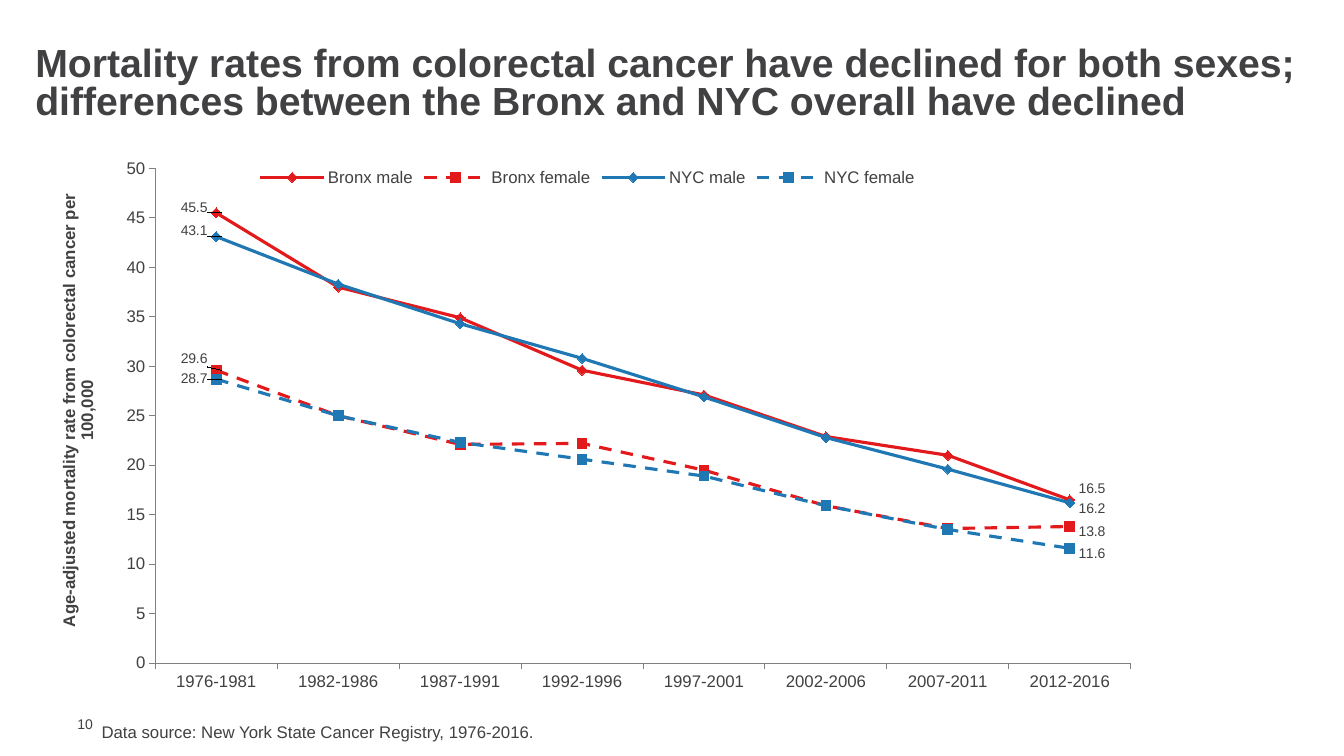
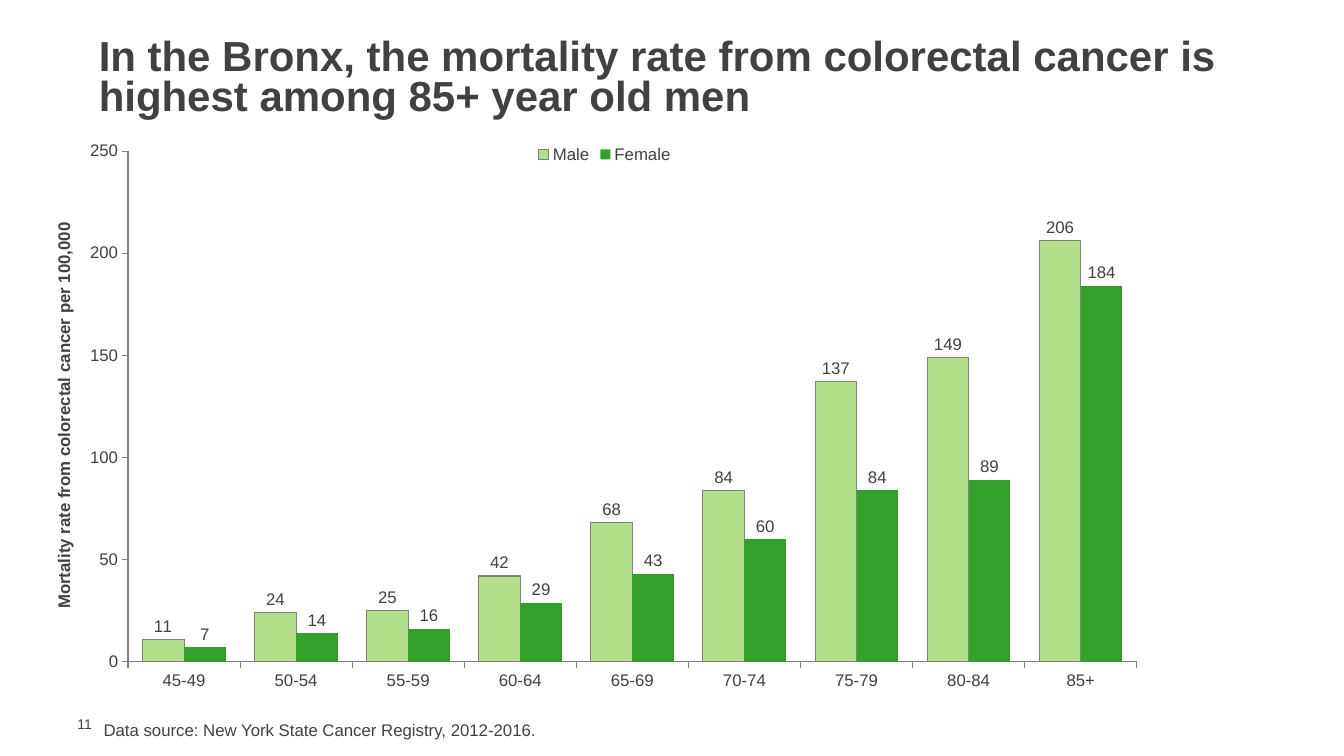
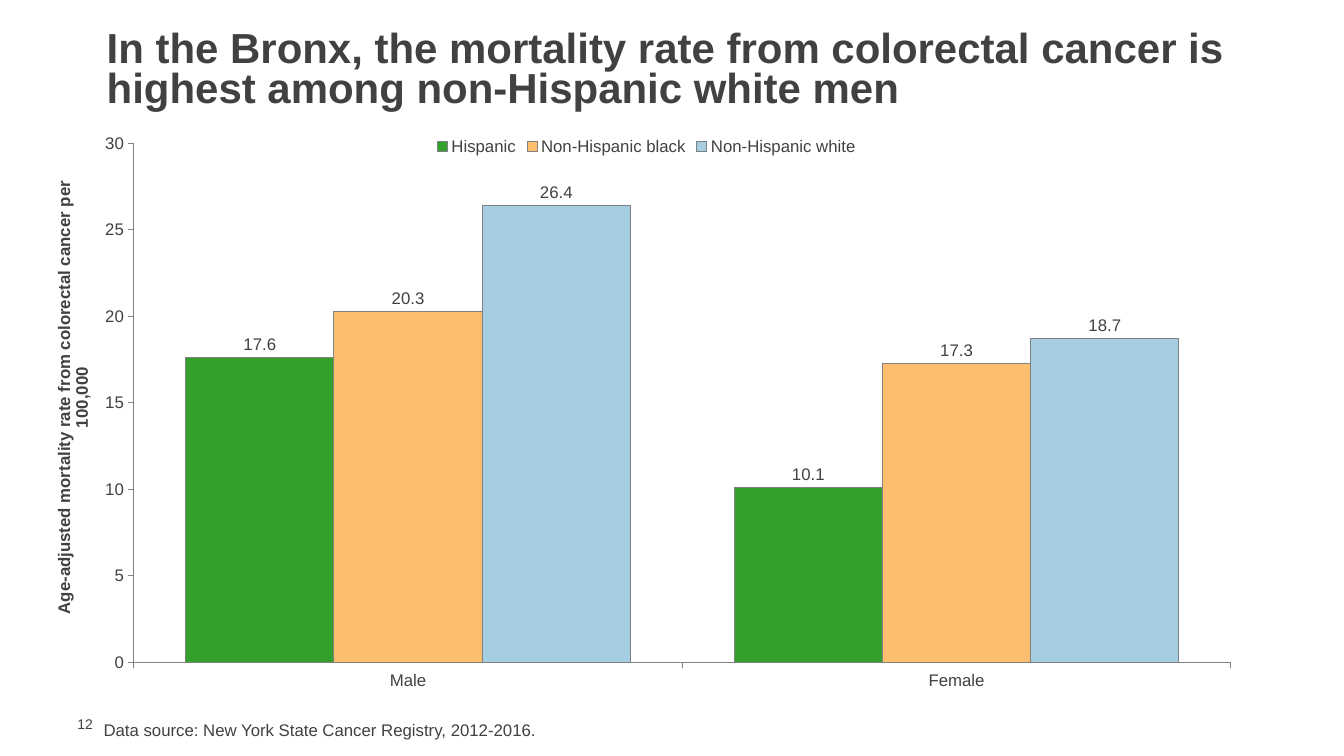
from lxml.etree import SubElement
from pptx import Presentation
from pptx.chart.data import CategoryChartData
from pptx.dml.color import RGBColor
from pptx.enum.chart import XL_CHART_TYPE as ChartType
from pptx.enum.chart import XL_LABEL_POSITION as LabelSpot
from pptx.enum.chart import XL_LEGEND_POSITION as LegendSpot
from pptx.enum.chart import XL_MARKER_STYLE as Marker
from pptx.enum.chart import XL_TICK_MARK as Tick
from pptx.enum.dml import MSO_LINE
from pptx.enum.text import MSO_ANCHOR as Anchor
from pptx.oxml import parse_xml
from pptx.oxml.ns import nsdecls, qn
from pptx.util import Cm, Pt

FONT = "Arial"
INK, AXIS_GREY = "414042", "808080"
RED, BLUE = "E31A1C", "1F78B4"
GREEN, LIGHT_GREEN, ORANGE, LIGHT_BLUE = "33A02C", "B2DF8A", "FDBF6F", "A6CEE3"
RATE = "ortality rate from colorectal cancer per 100,000"
ADJUSTED_RATE = "Age-adjusted m" + RATE
REGISTRY = "Data source: New York State Cancer Registry, "
LEADERS = (
    '<c:extLst %s><c:ext uri="{CE6537A1-D6FC-4f65-9D91-7224C49458BB}" '
    'xmlns:c15="http://schemas.microsoft.com/office/drawing/2012/chart">'
    '<c15:showLeaderLines val="1"/></c:ext></c:extLst>' % nsdecls("c")
)


def color(value):
    """Turn a hex string into a colour."""
    return RGBColor.from_string(value)


def style(font, size, bold=False):
    """Give a font the deck's face and ink."""
    font.name, font.size, font.bold = FONT, Pt(size), bold
    font.color.rgb = color(INK)


def place(part, index, **settings):
    """Give a chart part a manual layout."""
    for old in part.findall(qn("c:layout")):
        part.remove(old)
    layout = parse_xml("<c:layout %s/>" % nsdecls("c"))
    manual = SubElement(layout, qn("c:manualLayout"))
    for name, value in settings.items():
        SubElement(manual, qn("c:" + name)).set("val", str(value))
    part.insert(index, layout)


class Deck:
    """Holds the presentation, its style and the current slide."""

    def __init__(self, first_number):
        """Open an empty widescreen deck."""
        self.show = Presentation()
        self.show.slide_width, self.show.slide_height = Cm(33.87), Cm(19.05)
        self.number = first_number - 1
        self.slide = None

    def text(self, words, box, size, bold=False, anchor=Anchor.TOP):
        """Add a wrapped text box."""
        frame = self.slide.shapes.add_textbox(*map(Cm, box)).text_frame
        frame.word_wrap, frame.vertical_anchor = True, anchor
        frame.text = words
        style(frame.paragraphs[0].runs[0].font, size, bold)
        return frame

    def start(self, title, title_box, title_size, years, source_at):
        """Begin a slide with its title, number and source."""
        self.slide = self.show.slides.add_slide(self.show.slide_layouts[6])
        self.number += 1
        number = self.text(str(self.number), (1.7, 18.03, 1.09, 0.43), 10, anchor=Anchor.MIDDLE)
        number.margin_top = number.margin_right = number.margin_bottom = 0
        heading = self.text(title, title_box, title_size, True, Anchor.MIDDLE)
        heading.paragraphs[0].line_spacing = 0.8
        self.text(REGISTRY + years + ".", (*source_at, 25.2, 0.76), 12)

    def chart(self, kind, box, periods, series, digits, scale, rate, rate_at, plot):
        """Add a chart with styled axes and a top legend."""
        data = CategoryChartData(number_format=digits)
        data.categories = periods
        for name, values in series:
            data.add_series(name, values)
        chart = self.slide.shapes.add_chart(kind, *map(Cm, box), data).chart
        style(chart.font, 10)
        chart.has_title = False
        chart.has_legend = True
        chart.legend.position = LegendSpot.TOP
        chart.legend.include_in_layout = False
        style(chart.legend.font, 12)
        for axis in (chart.category_axis, chart.value_axis):
            axis.has_major_gridlines = False
            axis.major_tick_mark, axis.minor_tick_mark = Tick.OUTSIDE, Tick.NONE
            axis.format.line.color.rgb = color(AXIS_GREY)
            axis.format.line.width = Pt(0.75)
            style(axis.tick_labels.font, 12)
        rates = chart.value_axis
        rates.minimum_scale = 0
        rates.maximum_scale, rates.major_unit = scale
        rates.tick_labels.number_format = "0"
        rates.tick_labels.number_format_is_linked = False
        caption = rates.axis_title.text_frame
        caption.text = rate
        style(caption.paragraphs[0].runs[0].font, 12, True)
        x, y = rate_at
        place(rates.axis_title._element, 1, xMode="edge", yMode="edge", x=x, y=y)
        x, y, w, h = plot
        place(chart._chartSpace.chart.plotArea, 0, layoutTarget="inner",
              xMode="edge", yMode="edge", x=x, y=y, w=w, h=h)
        chart.plots[0].vary_by_categories = False
        return chart

    def columns(self, looks, digits, **chart_parts):
        """Add a clustered column chart with value labels."""
        chart = self.chart(ChartType.COLUMN_CLUSTERED, digits=digits, **chart_parts)
        chart.plots[0].gap_width = 70
        for group, (fill, outlined) in zip(chart.plots[0].series, looks):
            group.format.fill.solid()
            group.format.fill.fore_color.rgb = color(fill)
            if outlined:
                group.format.line.color.rgb = color(AXIS_GREY)
                group.format.line.width = Pt(0.75)
            else:
                group.format.line.fill.background()
            labels = group.data_labels
            labels.show_value = True
            labels.position = LabelSpot.OUTSIDE_END
            labels.number_format, labels.number_format_is_linked = digits, False
            style(labels.font, 12)

    def lines(self, looks, **chart_parts):
        """Add a line chart labelled at both ends."""
        chart = self.chart(ChartType.LINE_MARKERS, **chart_parts)
        last = len(chart_parts["periods"]) - 1
        for group, (hue, female, first_shift, last_shift) in zip(chart.plots[0].series, looks):
            group.smooth = False
            group.format.line.color.rgb = color(hue)
            group.format.line.width = Pt(2.25)
            if female:
                group.format.line.dash_style = MSO_LINE.DASH
            group.marker.style = Marker.SQUARE if female else Marker.DIAMOND
            group.marker.size = 7
            group.marker.format.fill.solid()
            group.marker.format.fill.fore_color.rgb = color(hue)
            group.marker.format.line.color.rgb = color(hue)
            labels = group.data_labels
            labels.show_value = False
            for index in (0, last):
                label = group.points[index].data_label
                style(label.font, 10)
                label.position = LabelSpot.RIGHT
            shifts = ((-0.04, first_shift), (0, last_shift))
            for label, (x, y) in zip(labels._element.findall(qn("c:dLbl")), shifts):
                place(label, 1, x=x, y=y)
            labels._element.append(parse_xml(LEADERS))


def main():
    """Build the three mortality slides."""
    deck = Deck(first_number=10)
    deck.start(
        "Mortality rates from colorectal cancer have declined for both sexes; "
        "differences between the Bronx and NYC overall have declined",
        (0.64, 1.07, 32.59, 2.16), 28, "1976-2016", (2.31, 18.06))
    deck.lines(
        [(RED, False, -0.01, -0.02), (RED, True, -0.02, 0.01),
         (BLUE, False, -0.01, 0.01), (BLUE, True, 0, 0.01)],
        box=(0.84, 3.96, 27.94, 14.17),
        periods=["1976-1981", "1982-1986", "1987-1991", "1992-1996",
                 "1997-2001", "2002-2006", "2007-2011", "2012-2016"],
        series=[("Bronx male", (45.5, 38, 34.9, 29.6, 27.1, 22.9, 21, 16.5)),
                ("Bronx female", (29.6, 25, 22.1, 22.2, 19.5, 15.9, 13.6, 13.8)),
                ("NYC male", (43.1, 38.3, 34.3, 30.8, 26.9, 22.8, 19.6, 16.2)),
                ("NYC female", (28.7, 25, 22.3, 20.6, 18.9, 15.9, 13.5, 11.6))],
        digits="0.0", scale=(50, 5), rate=ADJUSTED_RATE, rate_at=(0.02, 0.06),
        plot=(0.11, 0.02, 0.88, 0.88))

    deck.start(
        "In the Bronx, the mortality rate from colorectal cancer is "
        "highest among 85+ year old men",
        (2.24, 0.84, 29.39, 2.31), 30, "2012-2016", (2.36, 18.01))
    deck.columns(
        [(LIGHT_GREEN, True), (GREEN, False)],
        box=(1.27, 3.38, 27.94, 14.3),
        periods=["45-49", "50-54", "55-59", "60-64", "65-69",
                 "70-74", "75-79", "80-84", "85+"],
        series=[("Male", (11, 24, 25, 42, 68, 84, 137, 149, 206)),
                ("Female", (7, 14, 16, 29, 43, 60, 84, 89, 184))],
        digits="0", scale=(250, 50), rate="M" + RATE, rate_at=(0, 0.15),
        plot=(0.07, 0.03, 0.91, 0.9))

    deck.start(
        "In the Bronx, the mortality rate from colorectal cancer is "
        "highest among non-Hispanic white men",
        (2.44, 0.64, 29.01, 2.31), 30, "2012-2016", (2.36, 18.01))
    deck.columns(
        [(GREEN, True), (ORANGE, True), (LIGHT_BLUE, True)],
        box=(1.27, 3.18, 30.05, 14.53),
        periods=["Male", "Female"],
        series=[("Hispanic", (17.6, 10.1)),
                ("Non-Hispanic black", (20.3, 17.3)),
                ("Non-Hispanic white", (26.4, 18.7))],
        digits="0.0", scale=(30, 5), rate=ADJUSTED_RATE, rate_at=(0, 0.09),
        plot=(0.07, 0.03, 0.92, 0.9))
    deck.show.save("out.pptx")


if __name__ == "__main__":
    main()
